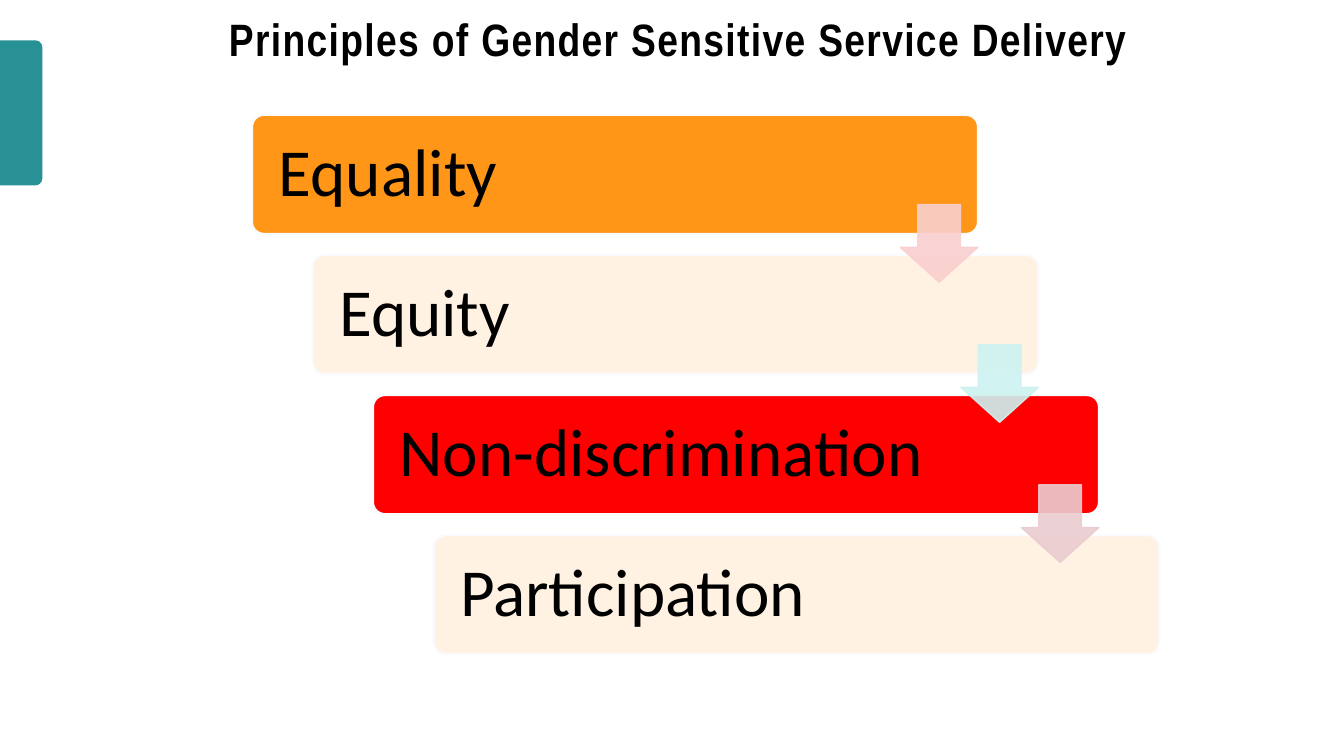
"""Build the slide on the principles of gender sensitive service delivery."""
from lxml import etree
from pptx import Presentation
from pptx.dml.color import RGBColor
from pptx.enum import shapes as s, text as t
from pptx.oxml import ns
from pptx.util import Inches, Pt

BLACK = RGBColor(0x00, 0x00, 0x00)
TEAL = RGBColor(0x28, 0x91, 0x95)
ORANGE = RGBColor(0xFF, 0x96, 0x17)
CREAM = RGBColor(0xFF, 0xF2, 0xE3)
RED = RGBColor(0xFF, 0x00, 0x00)
EDGE = RGBColor(0xFA, 0xFB, 0xFF)
PINK = RGBColor(0xF9, 0xCF, 0xCF)
AQUA = RGBColor(0xCD, 0xF2, 0xF0)
ROSE = RGBColor(0xEA, 0xCC, 0xD0)

STEPS = [("Equality", ORANGE), ("Equity", CREAM),
         ("Non-discrimination", RED), ("Participation", CREAM)]
ARROWS = [PINK, AQUA, ROSE]
STEP_X, STEP_Y = 0.6, 1.39
TITLE = {"name": "Arial Narrow", "size": Pt(32.4), "bold": True}
LABEL = {"name": "Calibri", "size": Pt(48), "bold": False}


def write(shape, words, form):
    """Put one left-aligned line of text in a shape and return its run."""
    frame = shape.text_frame
    frame.word_wrap = True
    frame.auto_size = t.MSO_AUTO_SIZE.NONE
    frame.vertical_anchor = t.MSO_ANCHOR.MIDDLE
    para = frame.paragraphs[0]
    para.alignment = t.PP_ALIGN.LEFT
    para.line_spacing = 0.9
    run = para.add_run()
    run.text = words
    for key, value in form.items():
        setattr(run.font, key, value)
    run.font.color.rgb = BLACK
    return run


def draw(slide, kind, box, fill, adjust=(), edge=None, width=1):
    """Add a flat filled preset shape."""
    shape = slide.shapes.add_shape(kind, *map(Inches, box))
    shape.shadow.inherit = False
    for i, value in enumerate(adjust):
        shape.adjustments[i] = value
    shape.fill.solid()
    shape.fill.fore_color.rgb = fill
    if edge is None:
        shape.line.fill.background()
    else:
        shape.line.color.rgb = edge
        shape.line.width = Pt(width)
    return shape


def add_title(slide, words):
    """Place and fill the title."""
    title = slide.shapes.title
    box = {"left": 2.17, "top": 0, "width": 9.48, "height": 0.82}
    for key, value in box.items():
        setattr(title, key, Inches(value))
    run = write(title, words, TITLE)
    run.font._element.set("spc", "100")


def add_step(slide, i, words, fill):
    """Add one labelled bar of the staircase."""
    box = (2.5 + i * STEP_X, 1.14 + i * STEP_Y, 7.2, 1.18)
    bar = draw(slide, s.MSO_SHAPE.ROUNDED_RECTANGLE, box, fill, [0.1], EDGE, 1.5)
    write(bar, words, LABEL)
    bar.text_frame.margin_left = Inches(0.23)


def add_arrow(slide, i, color):
    """Add one slightly transparent arrow between two bars."""
    box = (8.93 + i * STEP_X, 2.03 + i * STEP_Y, 0.77, 0.77)
    arrow = draw(slide, s.MSO_SHAPE.DOWN_ARROW, box, color, [0.55, 0.45], color)
    for tone in arrow._element.spPr.iter(ns.qn("a:srgbClr")):
        etree.SubElement(tone, ns.qn("a:alpha")).set("val", "90000")


def main():
    """Build and save the slide."""
    deck = Presentation()
    deck.slide_width, deck.slide_height = Inches(13.33), Inches(7.5)
    slide = deck.slides.add_slide(deck.slide_layouts[5])
    tab = draw(slide, s.MSO_SHAPE.ROUND_2_SAME_RECTANGLE,
               (-0.51, 0.91, 1.44, 0.42), TEAL)
    tab.rotation = 90
    add_title(slide, "Principles of Gender Sensitive Service Delivery")
    for i, (words, fill) in enumerate(STEPS):
        add_step(slide, i, words, fill)
    for i, color in enumerate(ARROWS):
        add_arrow(slide, i, color)
    deck.save("out.pptx")


if __name__ == "__main__":
    main()
